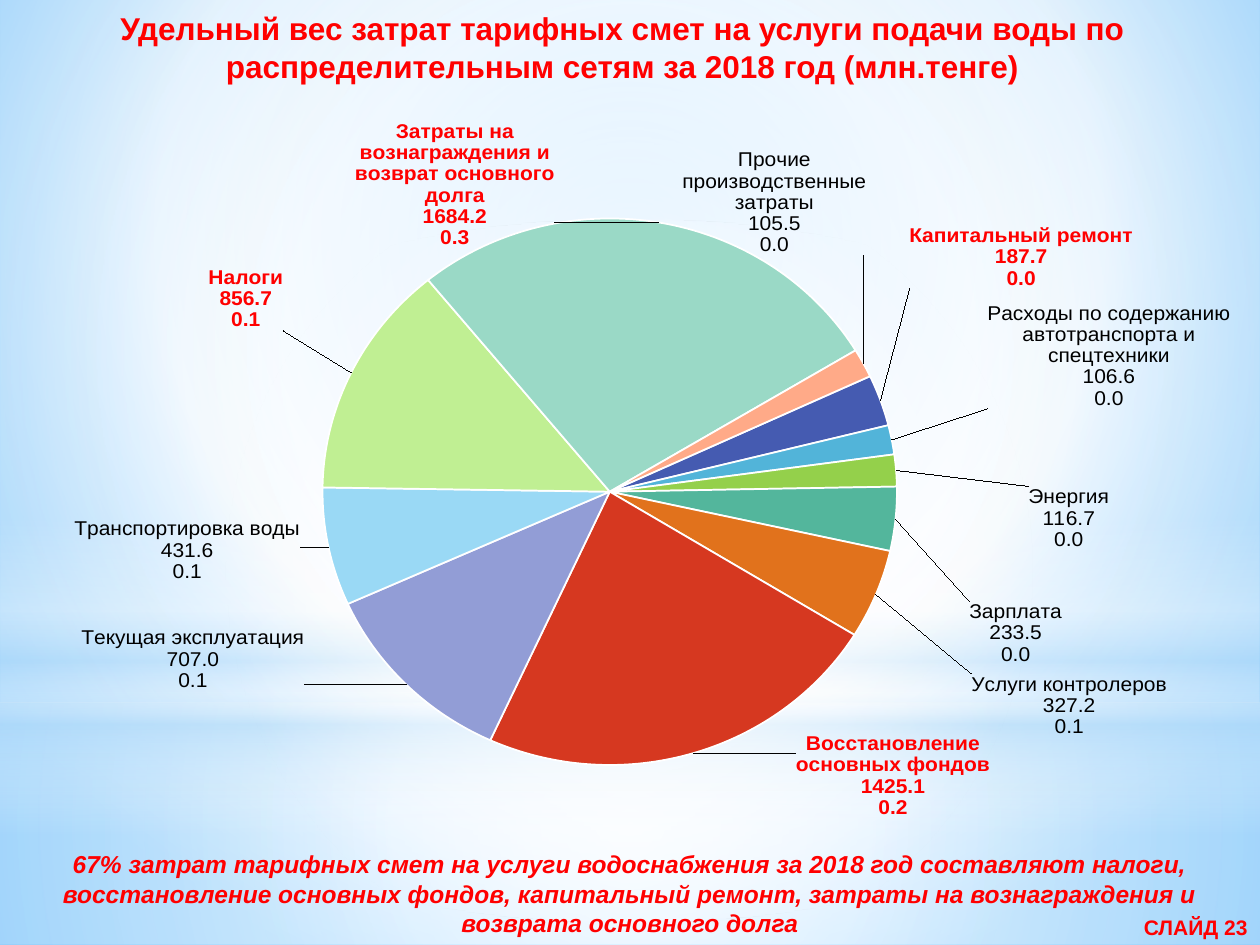
import math
import pptx
import pptx.util
import pptx.oxml
import pptx.oxml.ns
import pptx.dml.color
import pptx.chart.data
import pptx.enum.chart
import pptx.enum.shapes
import pptx.enum.text

PX = 914400 // 126
THEME = {
    "font": "Arial", "red": "FF0000", "black": "000000", "white": "FFFFFF",
    "haze": "B4DCFA", "sky": "9ED5FF", "deep": "5BB9FF",
    "title": 18, "note": 14, "label": 12,
}
qn = pptx.oxml.ns.qn
rgb = pptx.dml.color.RGBColor.from_string
align = pptx.enum.text.PP_ALIGN
kinds = pptx.enum.shapes.MSO_SHAPE


def shade(host, fill, stops, focus=None):
    fill.solid()
    marks = "".join(
        f'<a:gs pos="{pos * 1000}"><a:srgbClr val="{THEME[tone]}">'
        f'<a:alpha val="{alpha * 1000}"/></a:srgbClr></a:gs>'
        for pos, tone, alpha in stops)
    if focus:
        sides = " ".join(f'{side}="{part * 1000}"' for side, part in zip("ltrb", focus))
        form = f'<a:path path="circle"><a:fillToRect {sides}/></a:path>'
    else:
        form = '<a:lin ang="5400000" scaled="0"/>'
    old = host.find(".//" + qn("a:solidFill"))
    old.getparent().replace(old, pptx.oxml.parse_xml(
        f'<a:gradFill {pptx.oxml.ns.nsdecls("a")} rotWithShape="1">'
        f'<a:gsLst>{marks}</a:gsLst>{form}</a:gradFill>'))


def style(font, size, tone, bold=False):
    font.name = THEME["font"]
    font.size = pptx.util.Pt(THEME[size])
    font.bold = bold
    font.color.rgb = rgb(THEME[tone])


deck = pptx.Presentation()
deck.slide_width, deck.slide_height = 1260 * PX, 945 * PX
slide = deck.slides.add_slide(deck.slide_layouts[6])
shade(slide.element, slide.background.fill,
      [(0, "sky", 100), (60, "white", 100), (100, "deep", 100)], (20, 10, 20, 60))

MID = (50, 50, 50, 50)
glows = [
    (kinds.RECTANGLE, 703, 242, [(0, "white", 91), (37, "white", 76), (100, "haze", 79)], MID),
    (kinds.RECTANGLE, 0, 703, [(0, "white", 89), (48, "white", 62), (100, "haze", 79)], MID),
    (kinds.RECTANGLE, 519, 315, [(0, "white", 0), (29, "white", 30), (45, "haze", 40),
                                 (55, "white", 26), (65, "haze", 60), (100, "white", 0)], None),
    (kinds.OVAL, 220, 703, [(0, "white", 100), (56, "white", 0)], MID),
]
for kind, top, high, stops, focus in glows:
    glow = slide.shapes.add_shape(kind, 0, top * PX, 1260 * PX, high * PX)
    glow.shadow.inherit = False
    glow.line.fill.background()
    shade(glow.element, glow.fill, stops, focus)

texts = [
    ((0, 3, 1245, 89), "title", align.CENTER, False,
     "Удельный вес затрат тарифных смет на услуги подачи воды по "
     "распределительным сетям за 2018 год (млн.тенге)"),
    ((44, 843, 1172, 102), "note", align.CENTER, True,
     "67% затрат тарифных смет на услуги водоснабжения за 2018 год составляют налоги, "
     "восстановление основных фондов, капитальный ремонт, затраты на вознаграждения и "
     "возврата основного долга"),
    ((1126, 908, 134, 37), "label", align.RIGHT, False, "СЛАЙД 23"),
]
for spot, size, side, slant, words in texts:
    box = slide.shapes.add_textbox(*(n * PX for n in spot))
    box.text_frame.word_wrap = True
    line = box.text_frame.paragraphs[0]
    line.text = words
    line.alignment = side
    style(line.font, size, "red", True)
    line.font.italic = slant

# name, value, colour, label tone, label corner nearest the pie
costs = [
    ("Капитальный ремонт", 187.7, "455BB1", "red", (909, 278)),
    ("Расходы по содержанию автотранспорта и спецтехники", 106.6, "52B4D9", "black", (987, 404)),
    ("Энергия", 116.7, "94D04B", "black", (1028, 519)),
    ("Зарплата", 233.5, "53B69C", "black", (969, 606)),
    ("Услуги контролеров", 327.2, "E1721C", "black", (971, 682)),
    ("Восстановление основных фондов", 1425.1, "D63820", "red", (796, 744)),
    ("Текущая эксплуатация", 707.0, "929DD6", "black", (305, 633)),
    ("Транспортировка воды", 431.6, "9AD9F5", "black", (301, 519)),
    ("Налоги", 856.7, "C0EF93", "red", (284, 322)),
    ("Затраты на вознаграждения и возврат основного долга", 1684.2, "9AD9C6", "red", (355, 236)),
    ("Прочие производственные затраты", 105.5, "FFAA88", "black", (682, 243)),
]
LEFT, TOP, WIDE, HIGH = 25, 88, 1221, 757
MIDX, MIDY, REACH, START = 610, 491, 294, 65
data = pptx.chart.data.CategoryChartData(number_format="0.0")
data.categories = [cost[0] for cost in costs]
data.add_series("Series 1", [cost[1] for cost in costs])
chart = slide.shapes.add_chart(pptx.enum.chart.XL_CHART_TYPE.PIE, LEFT * PX, TOP * PX,
                               WIDE * PX, HIGH * PX, data).chart
chart.has_title = False
chart.has_legend = False
style(chart.font, "label", "black")
plot = chart.plots[0]
plot.vary_by_categories = True
NS = pptx.oxml.ns.nsdecls("c")
pie = chart.element.find(".//" + qn("c:pieChart"))
for old in pie.findall(qn("c:firstSliceAng")):
    pie.remove(old)
pie.append(pptx.oxml.parse_xml(f'<c:firstSliceAng {NS} val="{START}"/>'))
area = pie.getparent()
for old in area.findall(qn("c:layout")):
    area.remove(old)
area.insert(0, pptx.oxml.parse_xml(
    f'<c:layout {NS}><c:manualLayout><c:layoutTarget val="inner"/>'
    '<c:xMode val="edge"/><c:yMode val="edge"/><c:x val="0.227"/><c:y val="0.153"/>'
    '<c:w val="0.504"/><c:h val="0.759"/></c:manualLayout></c:layout>'))

row = plot.series[0]
tags = row.data_labels
tags.show_value = tags.show_percentage = tags.show_category_name = True
tags.number_format = "0.0"
tags.number_format_is_linked = False
style(tags.font, "label", "white")
total = sum(cost[1] for cost in costs)
angle = START
for i, (name, value, tint, tone, (x, y)) in enumerate(costs):
    point = row.points[i]
    point.format.fill.solid()
    point.format.fill.fore_color.rgb = rgb(tint)
    point.format.line.color.rgb = rgb(THEME["white"])
    point.format.line.width = pptx.util.Pt(1)
    sweep = value / total * 360
    turn = math.radians(angle + sweep / 2)
    angle += sweep
    movex = (x - MIDX - REACH * math.sin(turn)) / WIDE
    movey = (y - MIDY + REACH * math.cos(turn)) / HIGH
    label = point.data_label
    style(label.font, "label", tone, tone == "red")
    label.position = pptx.enum.chart.XL_LABEL_POSITION.BEST_FIT
    tag = [t for t in row._element.iter(qn("c:dLbl"))
           if t.find(qn("c:idx")).get("val") == str(i)][0]
    for part in ("showVal", "showCatName", "showPercent"):
        tag.find(qn("c:" + part)).set("val", "1")
    tag.insert(1, pptx.oxml.parse_xml(
        f'<c:layout {NS}><c:manualLayout><c:x val="{movex:.4f}"/>'
        f'<c:y val="{movey:.4f}"/></c:manualLayout></c:layout>'))
    tag.insert(2, pptx.oxml.parse_xml(f'<c:numFmt {NS} formatCode="0.0" sourceLinked="0"/>'))
    tag.append(pptx.oxml.parse_xml(f'<c:separator {NS}>\n</c:separator>'))

deck.save("out.pptx")
